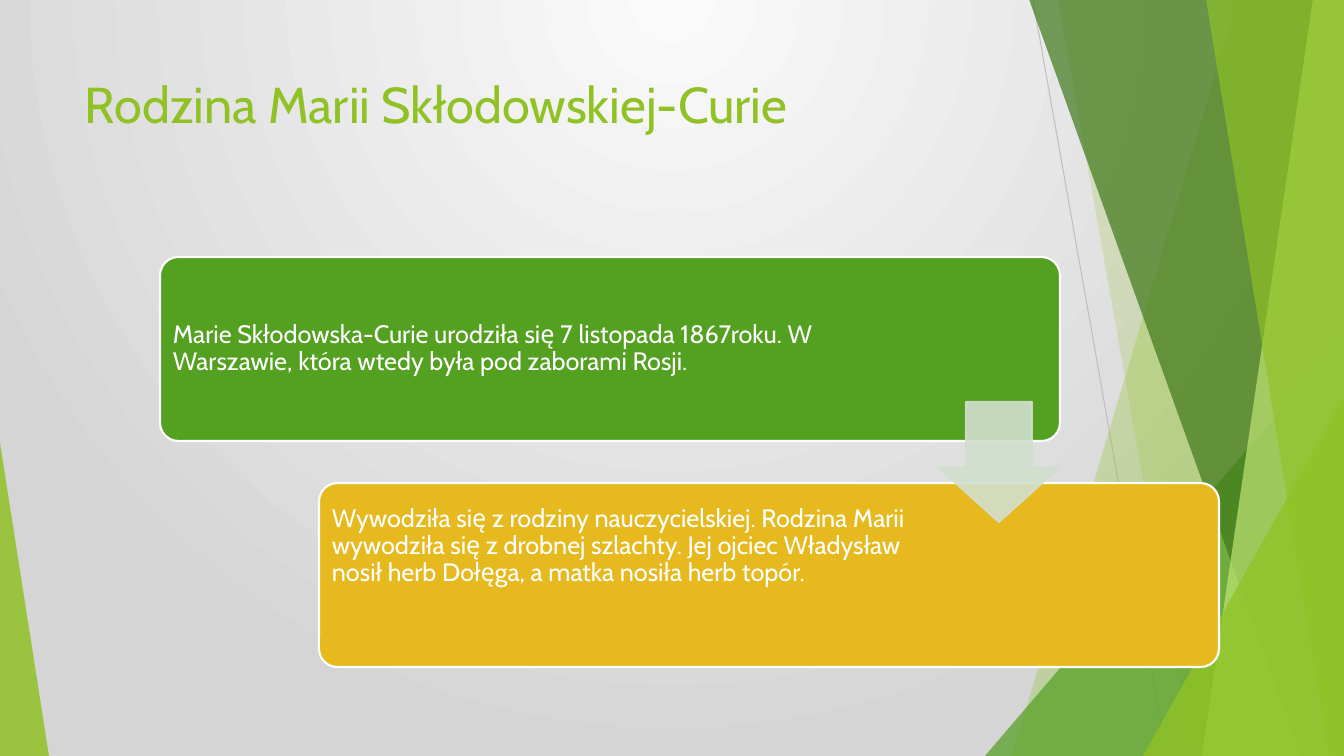
import pptx
import pptx.util
from lxml import etree
from pptx.dml.color import RGBColor
from pptx.enum.shapes import MSO_CONNECTOR, MSO_SHAPE
from pptx.enum.text import MSO_ANCHOR
from pptx.oxml.ns import qn

PX = 914400 / 100.8
WIDTH, HEIGHT = 1344, 756
FONT = "Cabin"

LIME = RGBColor(0x90, 0xC2, 0x26)
GREEN = RGBColor(0x54, 0xA0, 0x21)
DARK_GREEN = RGBColor(0x3F, 0x78, 0x19)
PALE_LIME = RGBColor(0xC0, 0xE4, 0x74)
GOLD = RGBColor(0xE6, 0xB9, 0x1E)
ARROW_GREEN = RGBColor(0xD1, 0xDF, 0xCD)
WHITE = RGBColor(0xFF, 0xFF, 0xFF)
LINE_GRAY = RGBColor(0xBF, 0xBF, 0xBF)
LIGHT_LINE = RGBColor(0xD9, 0xD9, 0xD9)
BG_INNER = RGBColor(0xFA, 0xFA, 0xFA)
BG_OUTER = RGBColor(0xD5, 0xD5, 0xD5)


def px(n):
    return pptx.util.Emu(round(n * PX))


def set_alpha(fill_parent, percent):
    color = fill_parent.find(qn("a:solidFill")).find(qn("a:srgbClr"))
    etree.SubElement(color, qn("a:alpha")).set("val", str(percent * 1000))


def style(sp, fill, alpha=100, line=None):
    sp.shadow.inherit = False
    sp.fill.solid()
    sp.fill.fore_color.rgb = fill
    if line is None:
        sp.line.fill.background()
    else:
        sp.line.color.rgb = line
        sp.line.width = pptx.util.Pt(1.5)
    if alpha < 100:
        spPr = sp.element.spPr
        set_alpha(spPr, alpha)
        if line is not None:
            set_alpha(spPr.find(qn("a:ln")), alpha)


def add_background(s):
    fill = s.background.fill
    fill.gradient()
    for stop, color in zip(fill.gradient_stops, (BG_INNER, BG_OUTER)):
        stop.color.rgb = color
    grad = s.element.find(".//" + qn("a:gradFill"))
    grad.remove(grad.find(qn("a:lin")))
    circle = etree.SubElement(grad, qn("a:path"))
    circle.set("path", "circle")
    center = etree.SubElement(circle, qn("a:fillToRect"))
    for side, percent in zip("ltrb", (43, 0, 43, 100)):
        center.set(side, str(percent * 1000))


def add_line(s, x1, y1, x2, y2, color):
    line = s.shapes.add_connector(MSO_CONNECTOR.STRAIGHT, px(x1), px(y1), px(x2), px(y2))
    line.line.color.rgb = color
    line.line.width = pptx.util.Pt(0.75)
    etree.SubElement(line.element.spPr, qn("a:effectLst"))


def add_band(s, top_x, bottom_x, color, alpha):
    """Slanted band that runs to the right edge of the slide."""
    fb = s.shapes.build_freeform(top_x, -1, scale=PX)
    fb.add_line_segments([(WIDTH, -1), (WIDTH, HEIGHT), (bottom_x, HEIGHT)], close=True)
    style(fb.convert_to_shape(), color, alpha)


def add_shape(s, kind, x, y, w, h, fill, adj, alpha=100, line=None):
    sp = s.shapes.add_shape(kind, px(x), px(y), px(w), px(h))
    for i, value in enumerate(adj):
        sp.adjustments[i] = value
    style(sp, fill, alpha, line)


def add_text(s, text, x, y, w, h, size=18, color=WHITE, anchor=MSO_ANCHOR.MIDDLE,
             spacing=0.9, insets=(7, 7, 7, 7)):
    tf = s.shapes.add_textbox(px(x), px(y), px(w), px(h)).text_frame
    tf.word_wrap = True
    tf.vertical_anchor = anchor
    tf.margin_left, tf.margin_top, tf.margin_right, tf.margin_bottom = map(px, insets)
    p = tf.paragraphs[0]
    p.line_spacing = spacing
    r = p.add_run()
    r.text = text
    r.font.name = FONT
    r.font.size = pptx.util.Pt(size)
    r.font.color.rgb = color


def add_card(s, text, x, y, fill, text_w, bottom_inset=7):
    add_shape(s, MSO_SHAPE.ROUNDED_RECTANGLE, x, y, 900, 184, fill, [0.1], line=WHITE)
    add_text(s, text, x + 6, y + 5, text_w, 173, insets=(7, 7, 7, bottom_inset))


def add_decoration(s):
    triangle = MSO_SHAPE.ISOSCELES_TRIANGLE
    add_line(s, 1033, 0, 1167, HEIGHT, LINE_GRAY)
    add_line(s, WIDTH, 406, 818, HEIGHT, LIGHT_LINE)
    add_band(s, 1238, 1012, LIME, 30)
    add_band(s, 1058, 1192, LIME, 20)
    add_shape(s, triangle, 985, 336, 359, 420, GREEN, [1], alpha=72)
    add_band(s, 1029, 1301, DARK_GREEN, 70)
    add_band(s, 1313, 1202, PALE_LIME, 70)
    add_band(s, 1206, 1329, LIME, 65)
    add_shape(s, triangle, 1143, 396, 201, 360, LIME, [1], alpha=80)
    add_shape(s, triangle, 0, 443, 49, 313, LIME, [0], alpha=85)


def main():
    prs = pptx.Presentation()
    prs.slide_width, prs.slide_height = px(WIDTH), px(HEIGHT)
    s = prs.slides.add_slide(prs.slide_layouts[6])

    # Background and facets
    add_background(s)
    add_decoration(s)

    # Title
    add_text(s, "Rodzina Marii Skłodowskiej-Curie", 75, 68, 948, 145, size=36, color=LIME,
             anchor=MSO_ANCHOR.TOP, spacing=1.0, insets=(10, 5, 10, 5))

    # Two steps joined by a block arrow
    add_card(s, "Marie Skłodowska-Curie urodziła się 7 listopada 1867roku. "
                "W Warszawie, która wtedy była pod zaborami Rosji.",
             160, 257, GREEN, 709)
    add_card(s, "Wywodziła się z rodziny nauczycielskiej. Rodzina Marii wywodziła się "
                "z drobnej szlachty. Jej ojciec Władysław nosił herb Dołęga, "
                "a matka nosiła herb topór.",
             319, 483, GOLD, 610, bottom_inset=63)
    add_shape(s, MSO_SHAPE.DOWN_ARROW, 939, 402, 120, 120, ARROW_GREEN, [0.55, 0.45],
              alpha=90, line=ARROW_GREEN)

    prs.save("out.pptx")


if __name__ == "__main__":
    main()
